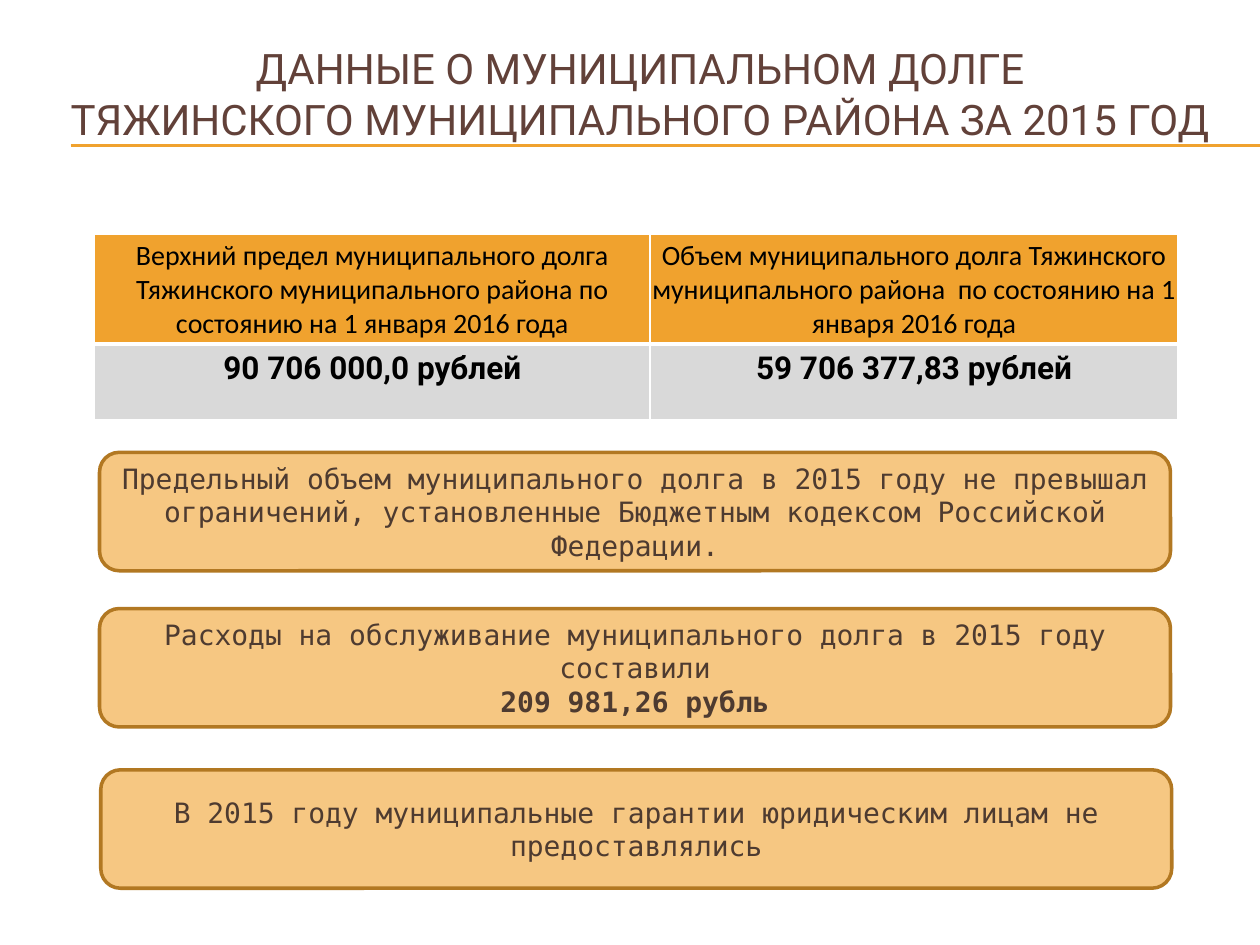
from pptx import Presentation
from pptx.dml.color import RGBColor
from pptx.enum.shapes import MSO_CONNECTOR, MSO_SHAPE
from pptx.enum.text import MSO_ANCHOR, MSO_AUTO_SIZE, PP_ALIGN
from pptx.oxml import parse_xml
from pptx.oxml.ns import nsdecls
from pptx.util import Inches, Pt

COLORS = {
    "title": "624139", "accent": "F0A22E", "value": "D9D9D9", "card": "F6C782",
    "edge": "B27822", "note": "4E3B30", "black": "000000", "white": "FFFFFF",
}
TITLE = ["ДАННЫЕ О МУНИЦИПАЛЬНОМ ДОЛГЕ",
         "ТЯЖИНСКОГО МУНИЦИПАЛЬНОГО РАЙОНА ЗА 2015 ГОД"]
DEBT = [
    ["Верхний предел муниципального долга Тяжинского муниципального района по состоянию на 1 января 2016 года",
     "Объем муниципального долга Тяжинского муниципального района  по состоянию на 1 января 2016 года"],
    ["90 706 000,0 рублей", "59 706 377,83 рублей"],
]
COLS, ROWS = [4.41, 4.19], [0.87, 0.6]
# left, top, lines of text, index of the bold line
NOTES = [
    (0.79, 3.59, ["Предельный объем муниципального долга в 2015 году не превышал ограничений, установленные Бюджетным кодексом Российской Федерации."], None),
    (0.79, 4.83, ["Расходы на обслуживание муниципального долга в 2015 году составили",
                  "209 981,26 рубль"], 1),
    (0.8, 6.11, ["В 2015 году муниципальные гарантии юридическим лицам не предоставлялись"], None),
]


def color(name):
    return RGBColor.from_string(COLORS[name])


def write(frame, lines, size, font, ink, bold=None):
    """Write one centred paragraph per line; bold is the index of a bold line."""
    frame.word_wrap = True
    for i, line in enumerate(lines):
        para = frame.paragraphs[0] if i == 0 else frame.add_paragraph()
        para.alignment = PP_ALIGN.CENTER
        run = para.add_run()
        run.text = line
        run.font.size, run.font.name = Pt(size), font
        run.font.bold = i == bold
        run.font.color.rgb = color(ink)


def border(cell, **widths):
    props = cell._tc.get_or_add_tcPr()
    for i, side in enumerate("LRTB"):
        props.insert(i, parse_xml(
            f'<a:ln{side} {nsdecls("a")} w="{Pt(widths.get(side, 1))}"><a:solidFill>'
            f'<a:srgbClr val="{COLORS["white"]}"/></a:solidFill></a:ln{side}>'))


def add_rule(slide, top):
    rule = slide.shapes.add_connector(
        MSO_CONNECTOR.STRAIGHT, Inches(0.56), Inches(top), Inches(10), Inches(top))
    rule.line.color.rgb = color("accent")
    rule.line.width = Pt(0.75)
    rule._element.spPr.append(parse_xml(f'<a:effectLst {nsdecls("a")}/>'))


def add_title(slide):
    title = slide.shapes.title
    title.left, title.top = Inches(0.33), Inches(0.23)
    title.width, title.height = Inches(9.5), Inches(1.02)
    frame = title.text_frame
    frame.auto_size = MSO_AUTO_SIZE.NONE
    frame.vertical_anchor = MSO_ANCHOR.MIDDLE
    write(frame, TITLE, 24, "Roboto", "title")


def add_debt(slide):
    table = slide.shapes.add_table(
        len(ROWS), len(COLS), Inches(0.75), Inches(1.86),
        Inches(sum(COLS)), Inches(sum(ROWS))).table
    for col, width in zip(table.columns, COLS):
        col.width = Inches(width)
    for r, height in enumerate(ROWS):
        table.rows[r].height = Inches(height)
        for c, text in enumerate(DEBT[r]):
            cell = table.cell(r, c)
            if r == 0:
                cell.vertical_anchor = MSO_ANCHOR.MIDDLE
                cell.margin_left = cell.margin_right = cell.margin_top = Inches(0.01)
                cell.margin_bottom = 0
                border(cell, B=3)
                write(cell.text_frame, [text], 16, "Calibri", "black")
            else:
                border(cell, T=3)
                write(cell.text_frame, [text], 18, "Roboto", "black", bold=0)
            cell.fill.solid()
            cell.fill.fore_color.rgb = color("value" if r else "accent")


def add_note(slide, left, top, lines, bold):
    card = slide.shapes.add_shape(
        MSO_SHAPE.ROUNDED_RECTANGLE, Inches(left), Inches(top), Inches(8.5), Inches(0.94))
    card.shadow.inherit = False
    card.fill.solid()
    card.fill.fore_color.rgb = color("card")
    card.line.color.rgb = color("edge")
    card.line.width = Pt(2)
    card.text_frame.vertical_anchor = MSO_ANCHOR.MIDDLE
    write(card.text_frame, lines, 16, "DejaVu Sans Mono", "note", bold=bold)


def main():
    deck = Presentation()
    deck.slide_width, deck.slide_height = Inches(10), Inches(7.5)
    slide = deck.slides.add_slide(deck.slide_layouts[5])
    for top in (1.15, 1.16):
        add_rule(slide, top)
    add_title(slide)
    add_debt(slide)
    for note in NOTES:
        add_note(slide, *note)
    deck.save("out.pptx")


if __name__ == "__main__":
    main()
